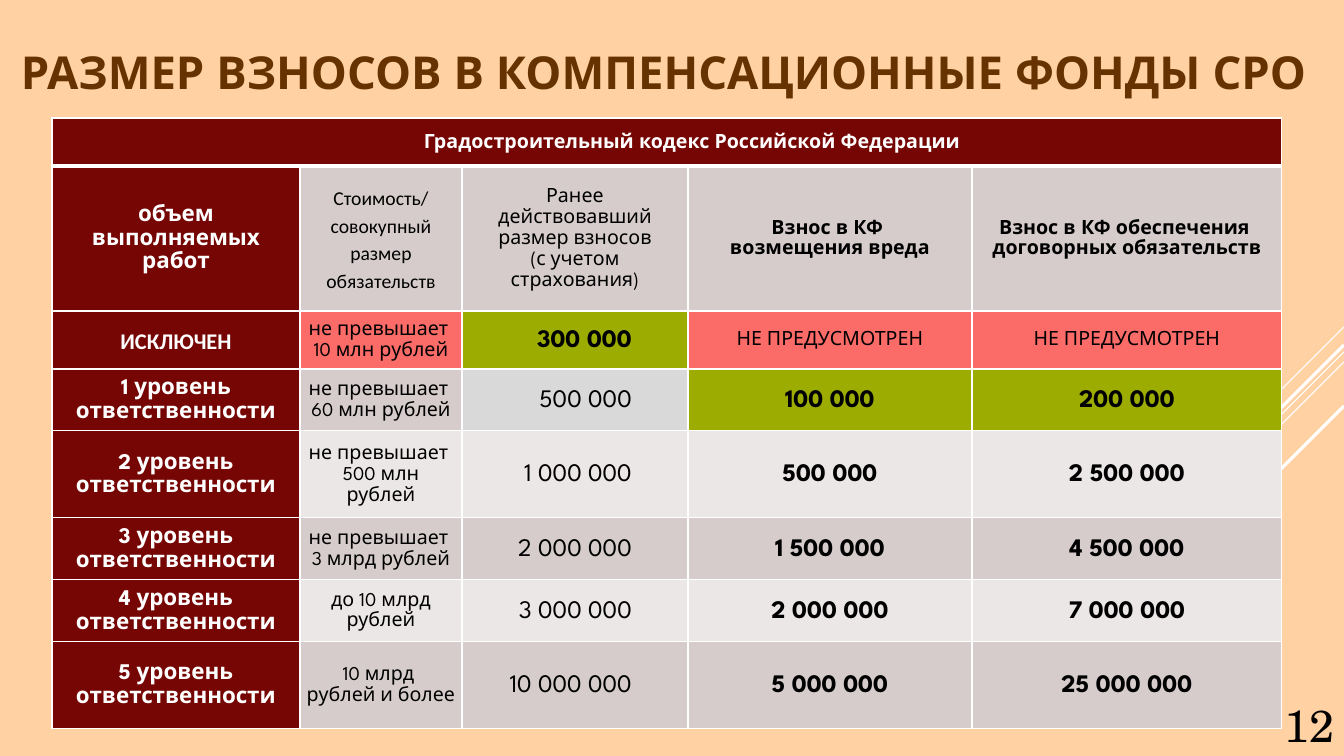
from pptx import Presentation
from pptx import util as u
from pptx.dml.color import RGBColor
from pptx.enum import shapes, text
from pptx.oxml.ns import qn
from lxml import etree

PEACH = RGBColor(0xFF, 0xD1, 0xA3)
BROWN = RGBColor(0x66, 0x33, 0x00)
WHITE = RGBColor(0xFF, 0xFF, 0xFF)
BLACK = RGBColor(0x00, 0x00, 0x00)
WINE = RGBColor(0x76, 0x06, 0x03)
ROSE = RGBColor(0xD6, 0xCC, 0xCC)
PALE = RGBColor(0xEC, 0xE7, 0xE7)
GREY = RGBColor(0xD9, 0xD9, 0xD9)
CORAL = RGBColor(0xFB, 0x6B, 0x67)
OLIVE = RGBColor(0x9C, 0xAC, 0x00)

SANS = "League Spartan"
PLAIN = "Calibri"
SERIF = "TeX Gyre Schola"

COLS = [248, 162, 226, 284, 310]
ROWS = [48, 145, 58, 58, 87, 58, 58, 87]
RAYS = [(327, 101, 0.75), (352, 328, 0.75), (362, 209, 0.75),
        (345, 192, 2.25), (406, 140, 2.25)]

HEADS = [
    ("объем выполняемых работ", dict(size=16, bold=True, color=WHITE)),
    ("Стоимость/\nсовокупный размер обязательств", dict(font=PLAIN)),
    ("Ранее действовавший размер взносов\n(с учетом страхования)", {}),
    ("Взнос в КФ \nвозмещения вреда", dict(bold=True)),
    ("Взнос в КФ обеспечения \nдоговорных обязательств", dict(bold=True)),
]
NONE = "НЕ ПРЕДУСМОТРЕН"
LEVELS = [
    ("ИСКЛЮЧЕН", "не превышает \n10 млн рублей", "300 000", NONE, NONE),
    ("1 уровень ответственности", "не превышает \n60 млн рублей",
     "500 000", "100 000", "200 000"),
    ("2 уровень ответственности", "не превышает \n500 млн рублей",
     "1 000 000", "500 000", "2 500 000"),
    ("3 уровень ответственности", "не превышает \n3 млрд рублей",
     "2 000 000", "1 500 000", "4 500 000"),
    ("4 уровень ответственности", "до 10 млрд рублей",
     "3 000 000", "2 000 000", "7 000 000"),
    ("5 уровень ответственности", "10 млрд \nрублей и более",
     "10 000 000", "5 000 000", "25 000 000"),
]
FILLS = [
    [CORAL, OLIVE, CORAL, CORAL],
    [ROSE, GREY, OLIVE, OLIVE],
    [PALE] * 4,
    [ROSE] * 4,
    [PALE] * 4,
    [ROSE] * 4,
]


def px(n):
    return u.Emu(round(n * 914400 / 100.8))


def write(frame, words, size=14, font=SANS, color=BLACK, bold=False,
          align=text.PP_ALIGN.CENTER, space=1.15):
    frame.text = words
    for para in frame.paragraphs:
        para.alignment = align
        para.line_spacing = space
        for run in para.runs:
            face = run.font
            face.size, face.name, face.bold = u.Pt(size), font, bold
            face.color.rgb = color


def place(shape, left, top, width, height):
    shape.left, shape.top = px(left), px(top)
    shape.width, shape.height = px(width), px(height)


def add_ray(slide, top, run, width):
    line = slide.shapes.add_connector(
        shapes.MSO_CONNECTOR.STRAIGHT,
        px(1344), px(top), px(1344 - run), px(top + run))
    line.line.color.rgb = WHITE
    line.line.width = u.Pt(width)
    etree.SubElement(line._element.spPr, qn("a:effectLst"))


def add_edges(cell, top=1, bottom=1):
    props = cell._tc.get_or_add_tcPr()
    sides = [("lnL", 1), ("lnR", 1), ("lnT", top), ("lnB", bottom)]
    for spot, (side, width) in enumerate(sides):
        edge = etree.Element(qn("a:" + side), w=str(u.Pt(width)))
        fill = etree.SubElement(edge, qn("a:solidFill"))
        etree.SubElement(fill, qn("a:srgbClr"), val=str(WHITE))
        props.insert(spot, edge)


def fill_cell(cell, words, fill, left=6, right=6, top=1, bottom=1, **style):
    cell.fill.solid()
    cell.fill.fore_color.rgb = fill
    cell.margin_left, cell.margin_right = px(left), px(right)
    cell.margin_top = cell.margin_bottom = 0
    cell.vertical_anchor = text.MSO_ANCHOR.MIDDLE
    write(cell.text_frame, words, **style)
    add_edges(cell, top, bottom)


def add_level(table, row, words, fills):
    name, limit, past, *fees = words
    first = row == 2
    fill_cell(table.cell(row, 0), name, WINE, size=16, bold=True,
              color=WHITE, font=PLAIN if first else SANS)
    fill_cell(table.cell(row, 1), limit, fills[0])
    fill_cell(table.cell(row, 2), past, fills[1], right=56, size=18,
              bold=first, align=text.PP_ALIGN.RIGHT)
    for col, fee in enumerate(fees, 3):
        style = {} if fee == NONE else dict(size=18, bold=True)
        fill_cell(table.cell(row, col), fee, fills[col - 1], **style)


def add_fees(slide):
    table = slide.shapes.add_table(
        len(ROWS), len(COLS), px(52), px(118),
        px(sum(COLS)), px(sum(ROWS))).table
    for col, width in zip(table.columns, COLS):
        col.width = px(width)
    for row, height in zip(table.rows, ROWS):
        row.height = px(height)
    table.cell(0, 0).merge(table.cell(0, len(COLS) - 1))
    for col in range(1, len(COLS)):
        add_edges(table.cell(0, col), bottom=3)
    fill_cell(table.cell(0, 0), "Градостроительный кодекс Российской Федерации",
              WINE, left=56, bottom=3, bold=True, color=WHITE)
    for col, (words, style) in enumerate(HEADS):
        fill_cell(table.cell(1, col), words, ROSE if col else WINE,
                  top=3, **style)
    for row, (words, fills) in enumerate(zip(LEVELS, FILLS), 2):
        add_level(table, row, words, fills)


def add_title(slide):
    title = slide.shapes.title
    place(title, 7, 34, 1314, 74)
    frame = title.text_frame
    frame.margin_left = frame.margin_right = 0
    frame.vertical_anchor = text.MSO_ANCHOR.MIDDLE
    write(frame, "РАЗМЕР ВЗНОСОВ В КОМПЕНСАЦИОННЫЕ ФОНДЫ СРО",
          size=32.4, color=BROWN, bold=True, space=1)


def add_number(slide):
    box = slide.shapes.add_textbox(px(1218), px(682), px(126), px(74))
    box.text_frame.word_wrap = True
    box.text_frame.vertical_anchor = text.MSO_ANCHOR.BOTTOM
    write(box.text_frame, "12", size=32, font=SERIF,
          align=text.PP_ALIGN.RIGHT, space=1)


def main():
    deck = Presentation()
    deck.slide_width, deck.slide_height = px(1344), px(756)
    slide = deck.slides.add_slide(deck.slide_layouts[5])
    slide.background.fill.solid()
    slide.background.fill.fore_color.rgb = PEACH
    for ray in RAYS:
        add_ray(slide, *ray)
    add_title(slide)
    add_number(slide)
    add_fees(slide)
    deck.save("out.pptx")


if __name__ == "__main__":
    main()
